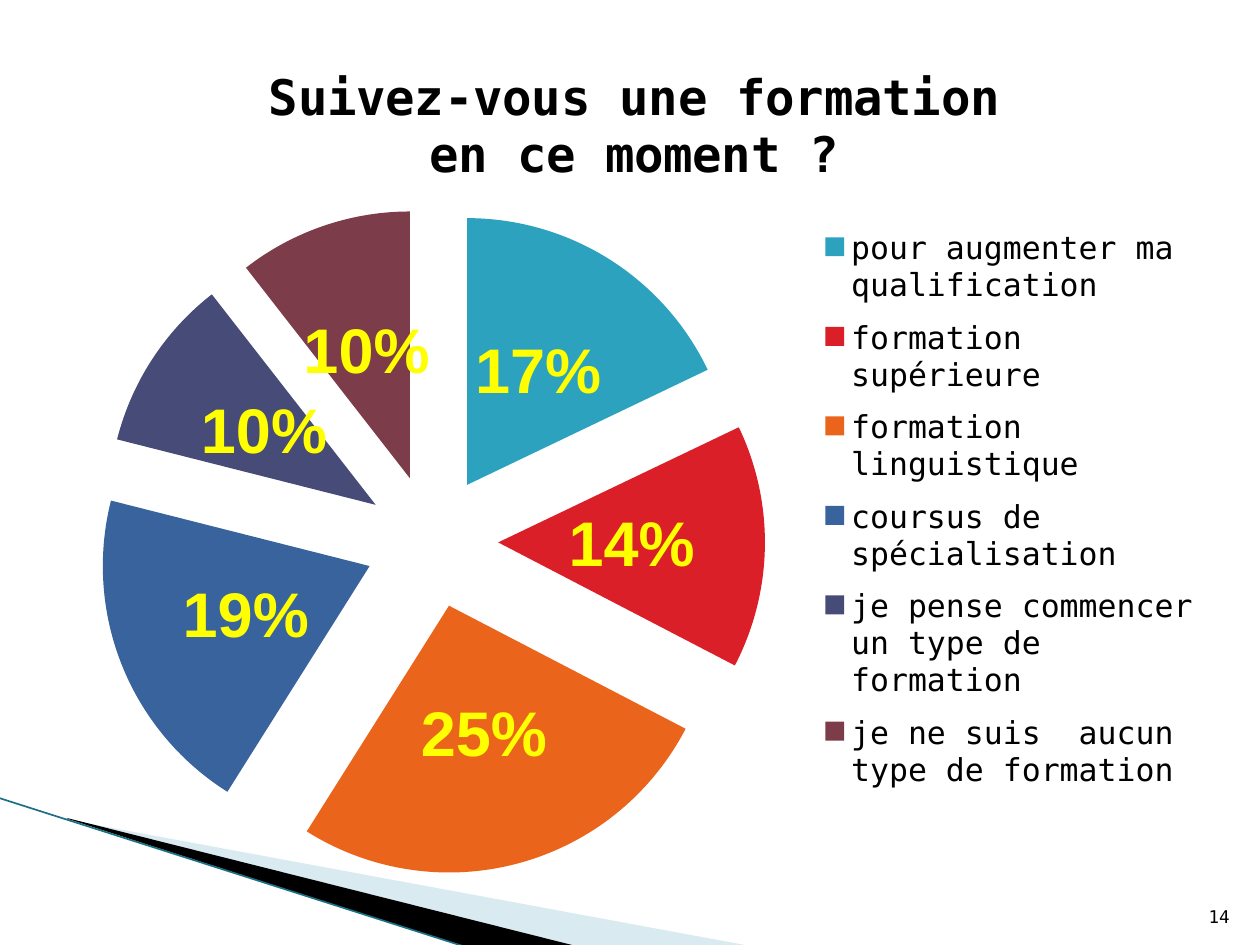
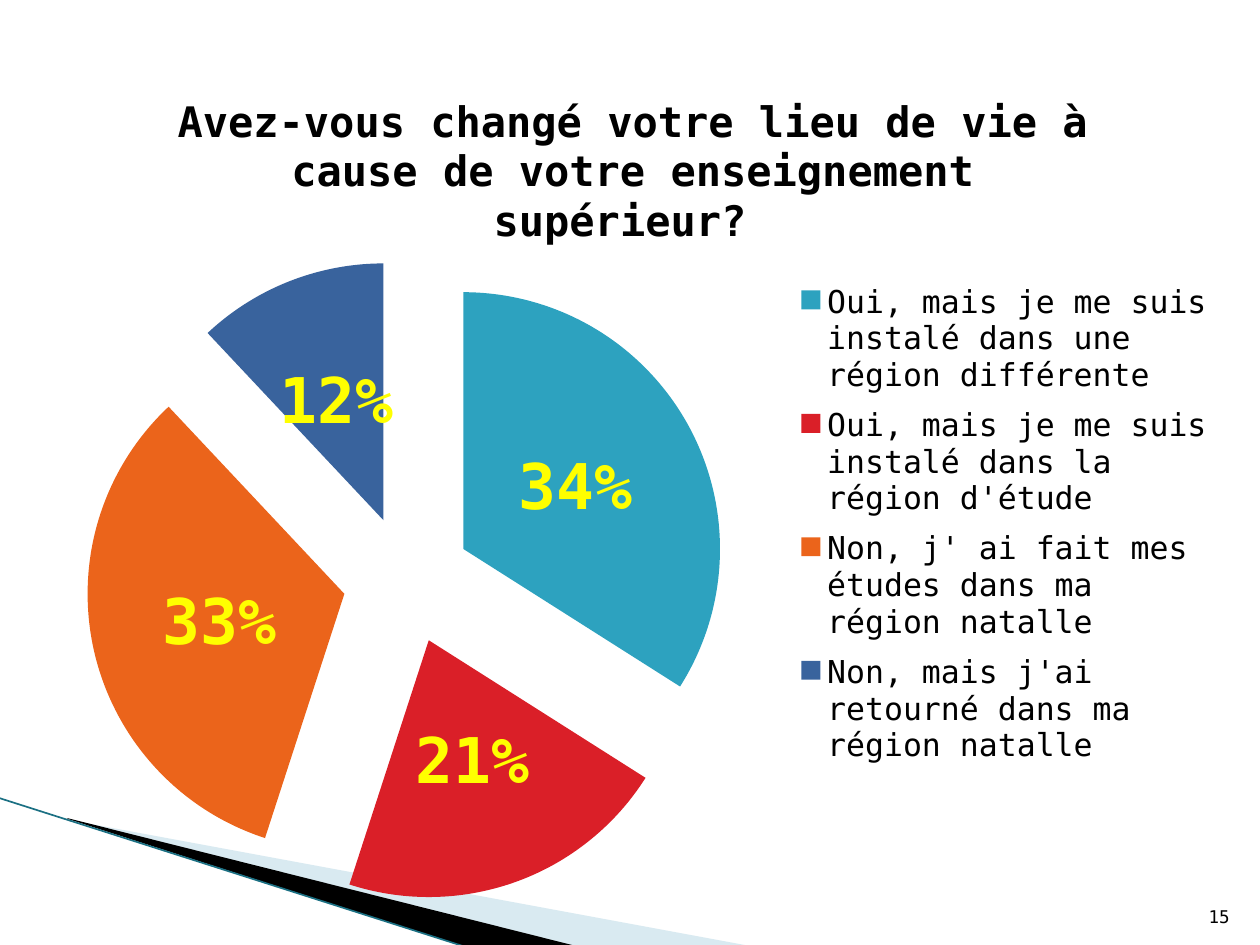
from lxml import etree
from pptx import Presentation
from pptx.chart.data import CategoryChartData
from pptx.dml.color import RGBColor
from pptx.enum.chart import XL_CHART_TYPE as CT, XL_LABEL_POSITION as LP, XL_LEGEND_POSITION as LG
from pptx.enum.shapes import MSO_CONNECTOR
from pptx.enum.text import MSO_ANCHOR, PP_ALIGN
from pptx.oxml.ns import qn
from pptx.util import Pt

# Content: boxes are (left, top, width, height) in px
SLIDES = [
    dict(number="14", title="Suivez-vous une formation\nen ce moment ?", title_size=28,
         label_font="Arial",
         answers=[("pour augmenter ma qualification", 0.17),
                  ("formation supérieure", 0.14),
                  ("formation linguistique", 0.25),
                  ("coursus de spécialisation", 0.19),
                  ("je pense commencer un type de formation", 0.1),
                  ("je ne suis  aucun type de formation", 0.1)],
         chart=(54, 37, 1150, 863), title_at=(265, 65),
         pie=(98, 208, 667, 667), legend=(814, 215, 390, 590)),
    dict(number="15",
         title="Avez-vous changé votre lieu de vie à cause de votre enseignement supérieur? ",
         title_size=24, label_font="DejaVu Sans Mono",
         answers=[("Oui, mais je me suis instalé dans une région différente", 0.34),
                  ("Oui, mais je me suis instalé dans la région d'étude", 0.21),
                  ("Non, j' ai fait mes études dans ma région natalle", 0.33),
                  ("Non, mais j'ai retourné dans ma région natalle", 0.12)],
         chart=(25, 55, 1201, 863), title_at=(170, 85),
         pie=(86, 259, 642, 642), legend=(793, 271, 422, 507)),
]

# Shared style
PX = 914400 / 126
FONT = "DejaVu Sans Mono"
COLORS = dict(text="000000", label="FFFF00", pale="A0CBDC", dark="000000", edge="1B7083")
SLICES = ["2DA2BF", "DA1F28", "EB641B", "39639D", "474B78", "7D3C4A"]
EXPLOSION = 25
BANDS = [("pale", 40, [(69, 820), (750, 946), (575, 946), (69, 819)]),
         ("dark", 100, [(67, 818), (576, 946), (469, 948), (68, 819)])]
EDGE = (-1, 798, 469, 948)
NUMBER_BOX = (1192, 883, 50, 50)


def px(*values):
    return [round(v * PX) for v in values]


def rgb(name):
    return RGBColor.from_string(COLORS[name])


def set_font(font, size, color="text", name=FONT, bold=False):
    font.size, font.name, font.bold = Pt(size), name, bold
    font.color.rgb = rgb(color)


def add_bands(s):
    for color, alpha, points in BANDS:
        fb = s.shapes.build_freeform(*points[0], scale=PX)
        fb.add_line_segments(points[1:], close=True)
        sp = fb.convert_to_shape()
        sp.shadow.inherit = False
        sp.fill.solid()
        sp.fill.fore_color.rgb = rgb(color)
        sp.line.fill.background()
        if alpha < 100:
            clr = sp.fill._xPr.find(".//" + qn("a:srgbClr"))
            etree.SubElement(clr, qn("a:alpha"), val=str(alpha * 1000))
    edge = s.shapes.add_connector(MSO_CONNECTOR.STRAIGHT, *px(*EDGE))
    edge.line.width = Pt(0.95)
    edge.line.color.rgb = rgb("edge")
    etree.SubElement(edge._element.spPr, qn("a:effectLst"))


def place(parent, index, box, frame, inner=False):
    """Give a chart part a fixed place, as fractions of the chart frame."""
    for old in parent.findall(qn("c:layout")):
        parent.remove(old)
    layout = etree.Element(qn("c:layout"))
    parent.insert(index, layout)
    manual = etree.SubElement(layout, qn("c:manualLayout"))
    settings = [("layoutTarget", "inner")] if inner else []
    settings += [("xMode", "edge"), ("yMode", "edge")]
    left, top, width, height = frame
    fractions = [(box[0] - left) / width, (box[1] - top) / height]
    fractions += [v / full for v, full in zip(box[2:], (width, height))]
    settings += [(k, f"{v:.4f}") for k, v in zip("xywh", fractions)]
    for tag, value in settings:
        etree.SubElement(manual, qn("c:" + tag), val=value)


def add_pie(s, d):
    data = CategoryChartData(number_format="0%")
    data.categories = [answer for answer, _ in d["answers"]]
    data.add_series("Series 1", [share for _, share in d["answers"]])
    chart = s.shapes.add_chart(CT.PIE, *px(*d["chart"]), data).chart
    set_font(chart.font, 10)

    # Title and legend
    tf = chart.chart_title.text_frame
    tf.text = d["title"]
    for p in tf.paragraphs:
        set_font(p.font, d["title_size"], bold=True)
    chart.has_legend = True
    chart.legend.position = LG.RIGHT
    chart.legend.include_in_layout = False
    set_font(chart.legend.font, 18)

    # Slices
    plot = chart.plots[0]
    plot.vary_by_categories = True
    series = plot.series[0]
    for i in range(len(d["answers"])):
        fill = series.points[i].format.fill
        fill.solid()
        fill.fore_color.rgb = RGBColor.from_string(SLICES[i])
    explosion = etree.Element(qn("c:explosion"), val=str(EXPLOSION))
    series._element.find(qn("c:dPt")).addprevious(explosion)

    # Value labels
    labels = series.data_labels
    labels.show_value = True
    labels.number_format, labels.number_format_is_linked = "0%", False
    labels.position = LP.CENTER
    set_font(labels.font, 36, "label", d["label_font"], bold=True)

    # Places inside the chart
    root = chart.element.find(qn("c:chart"))
    place(root.find(qn("c:title")), 1, d["title_at"], d["chart"])
    place(root.find(qn("c:plotArea")), 0, d["pie"], d["chart"], inner=True)
    place(root.find(qn("c:legend")), 1, d["legend"], d["chart"])


def add_number(s, number):
    tf = s.shapes.add_textbox(*px(*NUMBER_BOX)).text_frame
    tf.word_wrap = True
    tf.vertical_anchor = MSO_ANCHOR.BOTTOM
    p = tf.paragraphs[0]
    p.text, p.alignment = number, PP_ALIGN.RIGHT
    set_font(p.font, 10)


def main():
    prs = Presentation()
    prs.slide_width, prs.slide_height = px(1260, 945)
    for d in SLIDES:
        s = prs.slides.add_slide(prs.slide_layouts[6])
        add_bands(s)
        add_pie(s, d)
        add_number(s, d["number"])
    prs.save("out.pptx")


if __name__ == "__main__":
    main()
